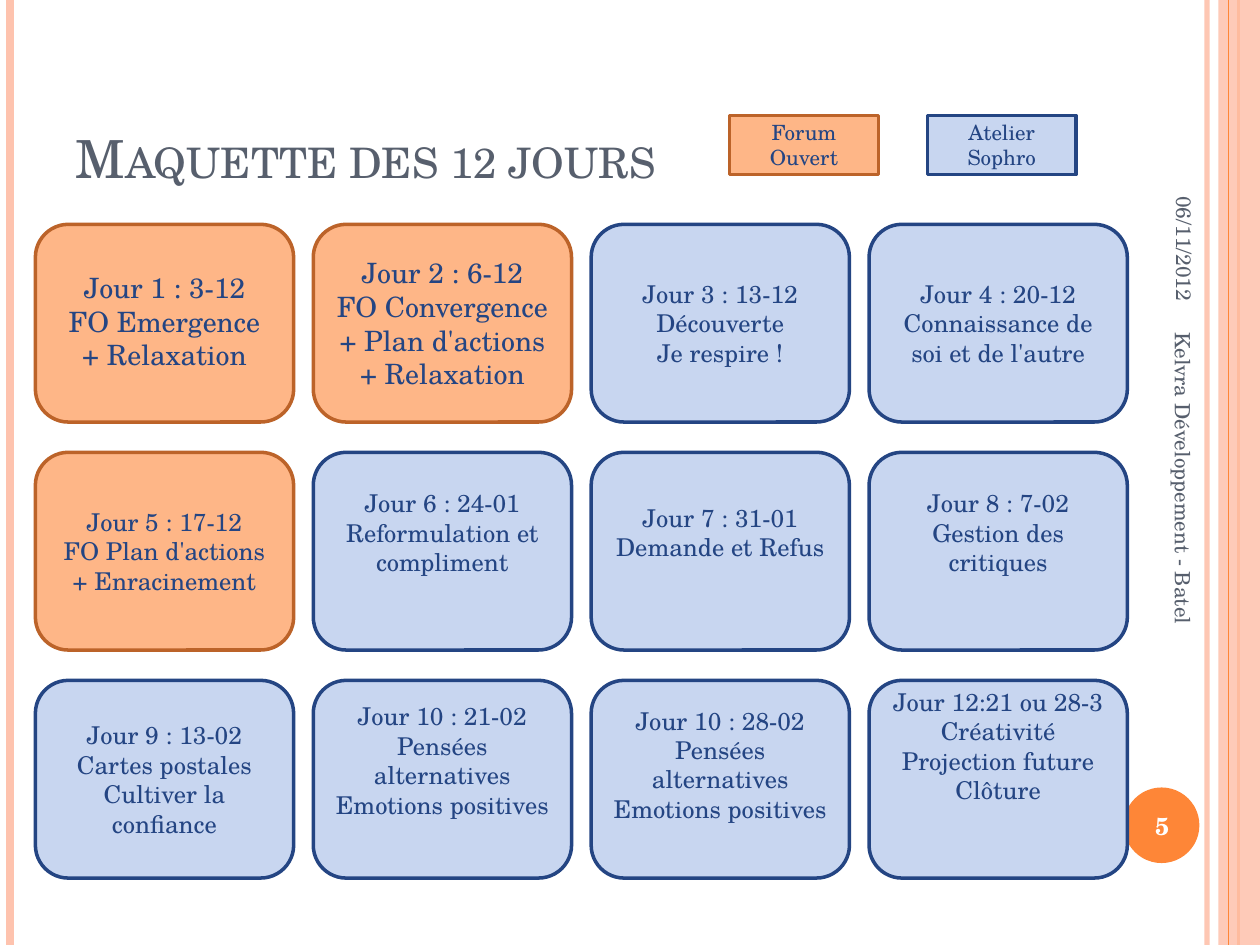
"""Build the planning slide of the twelve workshop days."""
from dataclasses import dataclass
from typing import Optional

from lxml.etree import SubElement
from pptx import Presentation
from pptx.dml.color import RGBColor as Color
from pptx.enum.shapes import MSO_CONNECTOR as Connector, MSO_SHAPE as Shape
from pptx.enum.text import MSO_ANCHOR as Anchor, MSO_AUTO_SIZE as AutoSize, PP_ALIGN as Align
from pptx.oxml.ns import qn
from pptx.util import Pt


@dataclass(frozen=True)
class Theme:
    """Colours and type sizes of the slide."""
    font: str = "TeX Gyre Schola"
    ink: str = "575F6D"
    white: str = "FFFFFF"
    accent: str = "FE8637"
    blush: str = "FEC3AE"
    navy: str = "244583"
    rust: str = "BC6329"
    peach: str = "FEB687"
    sky: str = "C8D6F0"
    title: float = 30
    large: float = 16
    normal: float = 14
    small: float = 12


@dataclass(frozen=True)
class Frame:
    """Position and size in points."""
    left: float
    top: float
    width: float
    height: float

    def lengths(self) -> tuple:
        """Return the four lengths as Pt values."""
        return tuple(Pt(value) for value in (self.left, self.top, self.width, self.height))


@dataclass(frozen=True)
class Style:
    """Fill and outline of a kind of session."""
    fill: str
    line: str


@dataclass(frozen=True)
class Day:
    """Text, kind, type size and upward room of one day."""
    text: str
    style: Style
    size: float
    lift: float = 0


@dataclass(frozen=True)
class Rule:
    """Full-height vertical line."""
    x: float
    colour: str
    width: float
    opacity: int = 100


@dataclass(frozen=True)
class Label:
    """Free text beside the grid."""
    text: str
    frame: Frame
    size: float
    colour: str
    align: Align
    rotation: float = 0
    bold: bool = False


THEME = Theme()
FORUM = Style(THEME.peach, THEME.rust)
SOPHRO = Style(THEME.sky, THEME.navy)
WIDTH, HEIGHT = 720, 540
COLUMNS = 4
CARD = Frame(20.2, 128.2, 147.6, 113)
STEP_X, STEP_Y = 158.8, 130.3

RULES = (
    Rule(689.8, THEME.blush, 3, 93),
    Rule(5.8, THEME.blush, 4.5),
    Rule(707.8, THEME.accent, 1.5),
)
INNER_RULE = Rule(702, THEME.accent, 0.75)
BAND = Frame(696.2, 0, 23.8, HEIGHT)
DISC = Frame(642.2, 450, 43.2, 43.2)
TITLE = Frame(36, 21.6, 588, 90)

LABELS = (
    Label("06/11/2012", Frame(597.6, 85, 158.4, 30.2), THEME.small, THEME.ink, Align.RIGHT, 90),
    Label("5", Frame(640.1, 451.4, 48.2, 41), THEME.normal, THEME.white, Align.CENTER, bold=True),
    Label("Kelvra Développement - Batel", Frame(550.1, 294.5, 252, 28.8),
          THEME.small, THEME.ink, Align.LEFT, 90),
)
DAYS = (
    Day("Jour 1 : 3-12\nFO Emergence\n+ Relaxation", FORUM, THEME.large, 2.4),
    Day("Jour 2 : 6-12\nFO Convergence\n+ Plan d'actions\n+ Relaxation", FORUM, THEME.large),
    Day("Jour 3 : 13-12\nDécouverte\nJe respire !", SOPHRO, THEME.normal),
    Day("Jour 4 : 20-12\nConnaissance de soi et de l'autre", SOPHRO, THEME.normal),
    Day("Jour 5 : 17-12\nFO Plan d'actions\n+ Enracinement", FORUM, THEME.normal),
    Day("Jour 6 : 24-01\nReformulation et compliment", SOPHRO, THEME.normal, 21.6),
    Day("Jour 7 : 31-01\nDemande et Refus", SOPHRO, THEME.normal, 21.6),
    Day("Jour 8 : 7-02\nGestion des critiques", SOPHRO, THEME.normal, 21.6),
    Day("Jour 9 : 13-02\nCartes postales\nCultiver la confiance", SOPHRO, THEME.normal),
    Day("Jour 10 : 21-02\nPensées alternatives\nEmotions positives", SOPHRO, THEME.normal, 21.6),
    Day("Jour 10 : 28-02\nPensées alternatives\nEmotions positives", SOPHRO, THEME.normal, 16.8),
    Day("Jour 12:21 ou 28-3\nCréativité\nProjection future\nClôture", SOPHRO, THEME.normal, 38.4),
)
LEGEND = (
    (Day("Forum Ouvert", FORUM, THEME.small), Frame(416.9, 66, 85, 33.8)),
    (Day("Atelier Sophro", SOPHRO, THEME.small), Frame(529.9, 66, 85, 33.8)),
)


def set_opacity(paint, percent: int) -> None:
    """Make the solid colour below an XML element translucent."""
    colour = next(paint.iter(qn("a:srgbClr")))
    SubElement(colour, qn("a:alpha")).set("val", str(percent * 1000))


def write(box, text: str, size: float, colour: str, align: Align,
          anchor: Anchor = Anchor.MIDDLE, bold: bool = False) -> None:
    """Write the lines of a text as formatted paragraphs."""
    frame = box.text_frame
    layout = {"word_wrap": True, "auto_size": AutoSize.NONE, "vertical_anchor": anchor}
    for name, value in layout.items():
        setattr(frame, name, value)
    frame.text = text
    font_format = {"name": THEME.font, "size": Pt(size), "bold": bold}
    for para in frame.paragraphs:
        para.alignment = align
        for span in para.runs:
            for name, value in font_format.items():
                setattr(span.font, name, value)
            span.font.color.rgb = Color.from_string(colour)


def add_rule(page, rule: Rule) -> None:
    """Draw a vertical line over the full height."""
    line = page.shapes.add_connector(Connector.STRAIGHT, Pt(rule.x), 0, Pt(rule.x), Pt(HEIGHT))
    line.line.width = Pt(rule.width)
    line.line.color.rgb = Color.from_string(rule.colour)
    properties = line._element.spPr
    if rule.opacity < 100:
        set_opacity(properties, rule.opacity)
    SubElement(properties, qn("a:effectLst"))


def add_box(page, kind: Shape, frame: Frame, fill: str, line: Optional[str] = None):
    """Draw a filled preset shape, outlined on request."""
    box = page.shapes.add_shape(kind, *frame.lengths())
    box.shadow.inherit = False
    box.fill.solid()
    box.fill.fore_color.rgb = Color.from_string(fill)
    if line:
        box.line.width = Pt(2)
        box.line.color.rgb = Color.from_string(line)
    else:
        box.line.fill.background()
    return box


def add_day(page, kind: Shape, frame: Frame, day: Day) -> None:
    """Draw a session box with its centred text."""
    box = add_box(page, kind, frame, day.style.fill, day.style.line)
    write(box, day.text, day.size, THEME.navy, Align.CENTER)
    if day.lift:
        box.text_frame.margin_top = 0
        box.text_frame.margin_bottom = Pt(day.lift)


def add_label(page, label: Label) -> None:
    """Draw a free text, turned if needed."""
    box = page.shapes.add_textbox(*label.frame.lengths())
    box.rotation = label.rotation
    write(box, label.text, label.size, label.colour, label.align, bold=label.bold)


def add_title(page, text: str) -> None:
    """Fill the title placeholder in small capitals."""
    title = page.shapes.title
    for name, value in zip(("left", "top", "width", "height"), TITLE.lengths()):
        setattr(title, name, value)
    write(title, text, THEME.title, THEME.ink, Align.LEFT, Anchor.BOTTOM)
    title.text_frame.paragraphs[0].runs[0].font._element.set("cap", "small")


def main() -> None:
    """Build and save the deck."""
    deck = Presentation()
    deck.slide_width, deck.slide_height = Pt(WIDTH), Pt(HEIGHT)
    page = deck.slides.add_slide(deck.slide_layouts[5])
    for rule in RULES:
        add_rule(page, rule)
    band = add_box(page, Shape.RECTANGLE, BAND, THEME.blush)
    set_opacity(band._element.spPr, 87)
    add_rule(page, INNER_RULE)
    add_box(page, Shape.OVAL, DISC, THEME.accent)
    add_title(page, "Maquette des 12 jours")
    for label in LABELS:
        add_label(page, label)
    for index, day in enumerate(DAYS):
        row, column = divmod(index, COLUMNS)
        frame = Frame(CARD.left + column * STEP_X, CARD.top + row * STEP_Y, CARD.width, CARD.height)
        add_day(page, Shape.ROUNDED_RECTANGLE, frame, day)
    for entry, frame in LEGEND:
        add_day(page, Shape.RECTANGLE, frame, entry)
    deck.save("out.pptx")


if __name__ == "__main__":
    main()
